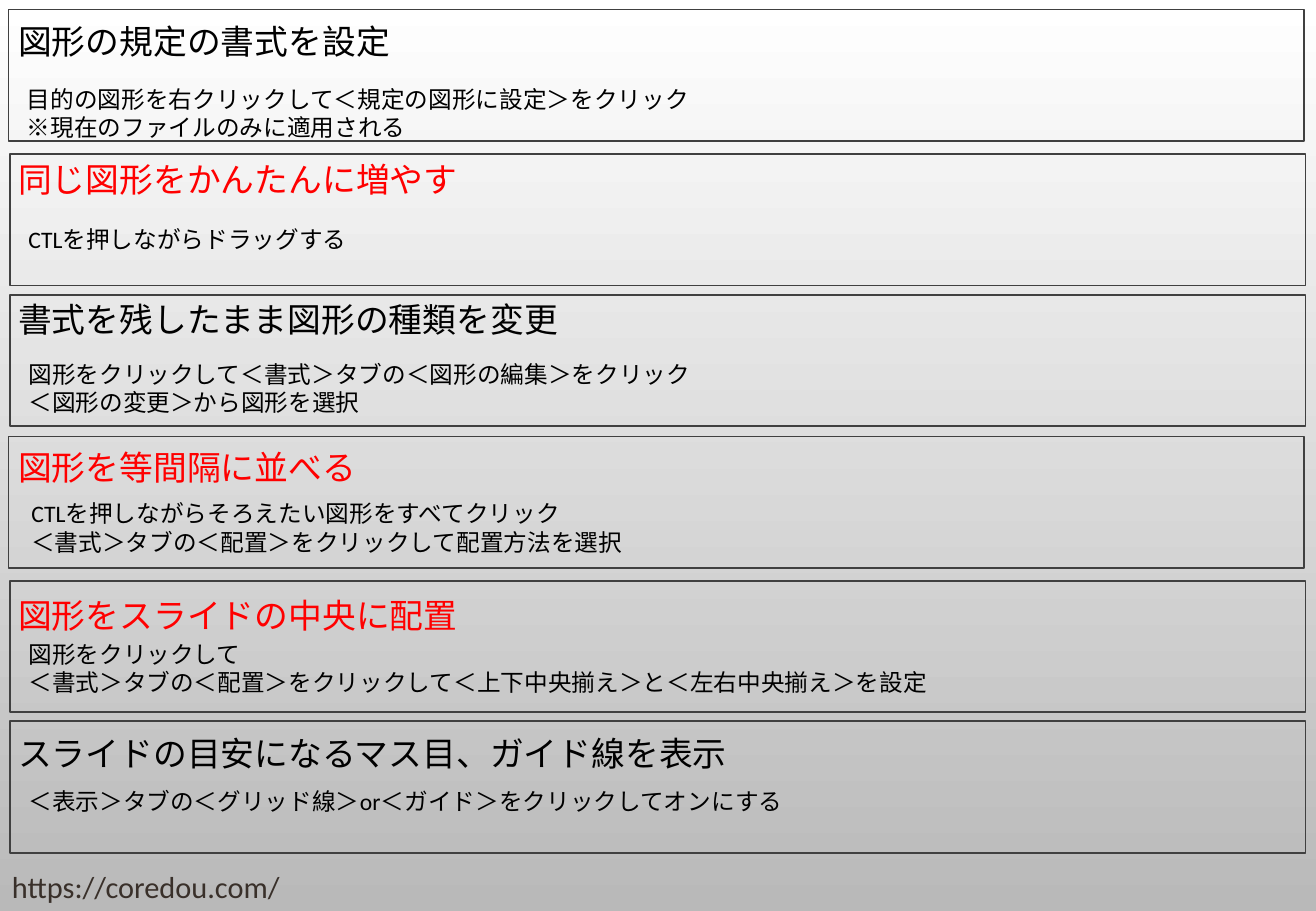
import pptx
import pptx.util
import pptx.dml.color
import pptx.enum.shapes
import pptx.enum.text

Pt = pptx.util.Pt
COLORS = {"black": "000000", "red": "FF0000", "frame": "404040",
          "url": "39302A", "top": "FFFFFF", "bottom": "B9B9B9"}


def rgb(name):
    return pptx.dml.color.RGBColor.from_string(COLORS[name])


class Deck:
    """Style and current slide."""
    font = "Calibri"

    def __init__(self, prs):
        self.s = prs.slides.add_slide(prs.slide_layouts[6])

    def background(self):
        fill = self.s.background.fill
        fill.gradient()
        fill.gradient_angle = 270
        for stop, (name, position) in zip(fill.gradient_stops, (("top", 0), ("bottom", 1))):
            stop.color.rgb = rgb(name)
            stop.position = position

    def frame(self, x, y, w, h):
        sp = self.s.shapes.add_shape(pptx.enum.shapes.MSO_SHAPE.RECTANGLE,
                                     Pt(x), Pt(y), Pt(w), Pt(h))
        sp.shadow.inherit = False
        sp.fill.background()
        sp.line.color.rgb = rgb("frame")
        sp.line.width = Pt(1)

    def text(self, x, y, w, h, lines, size, color="black", **frame_format):
        tf = self.s.shapes.add_textbox(Pt(x), Pt(y), Pt(w), Pt(h)).text_frame
        box = {"word_wrap": True,
               "auto_size": pptx.enum.text.MSO_AUTO_SIZE.SHAPE_TO_FIT_TEXT}
        for key, value in {**box, **frame_format}.items():
            setattr(tf, key, value)
        for i, line in enumerate(lines):
            p = tf.add_paragraph() if i else tf.paragraphs[0]
            r = p.add_run()
            r.text = line
            for key, value in {"name": self.font, "size": Pt(size)}.items():
                setattr(r.font, key, value)
            r.font.color.rgb = rgb(color)


# Each tip: frame (x, y), title (y, colour, text), body (x, y, width, lines)
TIPS = [
    ((5, 5.75), (8.6, "black", "図形の規定の書式を設定"),
     (8.9, 46.8, 441, ["目的の図形を右クリックして＜規定の図形に設定＞をクリック",
                       "※現在のファイルのみに適用される"])),
    ((5.75, 91.25), (90.7, "red", "同じ図形をかんたんに増やす"),
     (9.75, 129.6, 441, ["CTLを押しながらドラッグする"])),
    ((5.75, 174.75), (173.6, "black", "書式を残したまま図形の種類を変更"),
     (9.75, 209.5, 441, ["図形をクリックして＜書式＞タブの＜図形の編集＞をクリック",
                         "＜図形の変更＞から図形を選択"])),
    ((5, 258.75), (261.4, "red", "図形を等間隔に並べる"),
     (11.5, 292.3, 441, ["CTLを押しながらそろえたい図形をすべてクリック",
                         "＜書式＞タブの＜配置＞をクリックして配置方法を選択"])),
    ((5.75, 344.25), (348.8, "red", "図形をスライドの中央に配置"),
     (9.75, 375.8, 581, ["図形をクリックして",
                         "＜書式＞タブの＜配置＞をクリックして＜上下中央揃え＞と＜左右中央揃え＞を設定"])),
    ((5.75, 427.5), (430.5, "black", "スライドの目安になるマス目、ガイド線を表示"),
     (9.75, 463, 560, ["＜表示＞タブの＜グリッド線＞or＜ガイド＞をクリックしてオンにする"])),
]


def main():
    prs = pptx.Presentation()
    prs.slide_width, prs.slide_height = Pt(780), Pt(540)
    deck = Deck(prs)
    deck.background()

    # Site address
    deck.text(0, 511.2, 250, 28.8, ["https://coredou.com/"], 18, "url",
              auto_size=pptx.enum.text.MSO_AUTO_SIZE.NONE,
              vertical_anchor=pptx.enum.text.MSO_ANCHOR.MIDDLE)

    # Tips
    for (x, y), (title_y, color, title), (body_x, body_y, width, lines) in TIPS:
        deck.frame(x, y, 768, 78)
        deck.text(3.75, title_y, 443, 31.5, [title], 20, color)
        deck.text(body_x, body_y, width, 7.4 + 16.8 * len(lines), lines, 14)

    prs.save("out.pptx")


if __name__ == "__main__":
    main()
